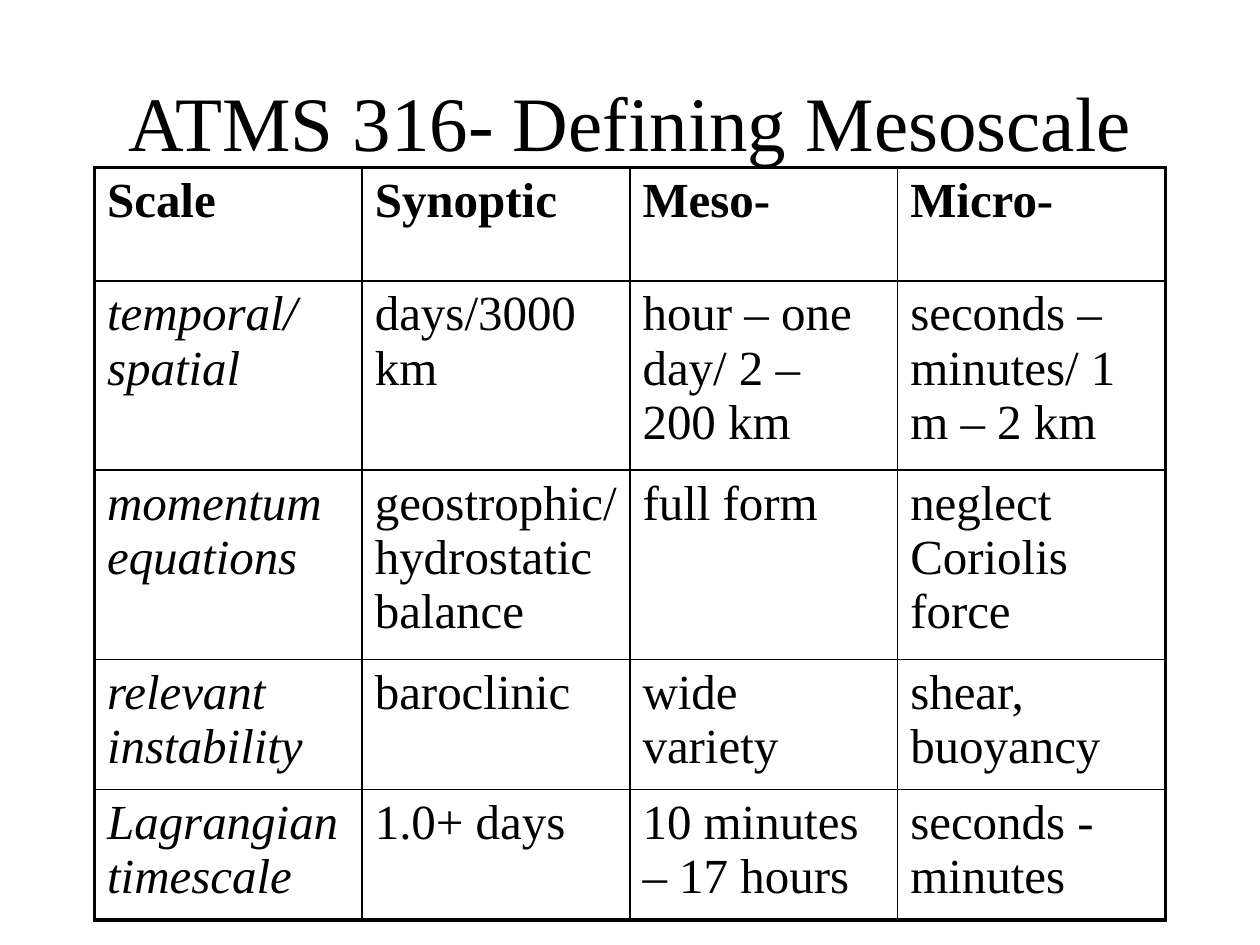
from lxml import etree
from pptx import Presentation
from pptx.dml.color import RGBColor
from pptx.enum.text import MSO_ANCHOR, PP_ALIGN
from pptx.oxml.ns import qn
from pptx.util import Inches, Pt

MIDDLE = MSO_ANCHOR.MIDDLE
CENTER = PP_ALIGN.CENTER
FONT = "Times New Roman"
BLACK = "000000"
OUTER, INNER = 2.25, 1


def style_font(font, size):
    font.name = FONT
    font.size = Pt(size)
    font.color.rgb = RGBColor.from_string(BLACK)


def add_border(cell, side, width):
    line = etree.SubElement(cell._tc.get_or_add_tcPr(), qn(f"a:ln{side}"), w=str(Pt(width)))
    fill = etree.SubElement(line, qn("a:solidFill"))
    etree.SubElement(fill, qn("a:srgbClr"), val=BLACK)


presentation = Presentation()
presentation.slide_width = Inches(10)
presentation.slide_height = Inches(7.5)
slide = presentation.slides.add_slide(presentation.slide_layouts[6])

# Title
title = slide.shapes.add_textbox(Inches(0.75), Inches(0.33), Inches(8.5), Inches(1.25))
frame = title.text_frame
frame.word_wrap = True
frame.vertical_anchor = MIDDLE
paragraph = frame.paragraphs[0]
paragraph.text = "ATMS 316- Defining Mesoscale"
paragraph.alignment = CENTER
style_font(paragraph.font, 44)

# Table of scales: bold header row, italic first column
rows = [
    ["Scale", "Synoptic", "Meso-", "Micro-"],
    ["temporal/ spatial", "days/3000 km", "hour – one day/ 2 – 200 km", "seconds – minutes/ 1 m – 2 km"],
    ["momentum equations", "geostrophic/ hydrostatic balance", "full form", "neglect Coriolis force"],
    ["relevant instability", "baroclinic", "wide variety", "shear, buoyancy"],
    ["Lagrangian timescale", "1.0+ days", "10 minutes – 17 hours", "seconds - minutes"],
]
row_heights = [0.9, 1.39, 1.39, 0.96, 0.96]
last_row, last_column = len(rows) - 1, len(rows[0]) - 1
table = slide.shapes.add_table(
    len(rows), len(rows[0]), Inches(0.75), Inches(1.33), Inches(8.5), Inches(sum(row_heights))
).table
table.first_row = False
table.horz_banding = False

for row, texts in enumerate(rows):
    table.rows[row].height = Inches(row_heights[row])
    for column, text in enumerate(texts):
        cell = table.cell(row, column)
        paragraph = cell.text_frame.paragraphs[0]
        paragraph.text = text
        style_font(paragraph.font, 28)
        paragraph.font.bold = row == 0
        paragraph.font.italic = row > 0 and column == 0

        # Thick frame around the table, thin lines inside; borders precede the fill
        on_edge = {"L": column == 0, "R": column == last_column, "T": row == 0, "B": row == last_row}
        for side, is_outer in on_edge.items():
            add_border(cell, side, OUTER if is_outer else INNER)
        cell.fill.background()

presentation.save("out.pptx")
